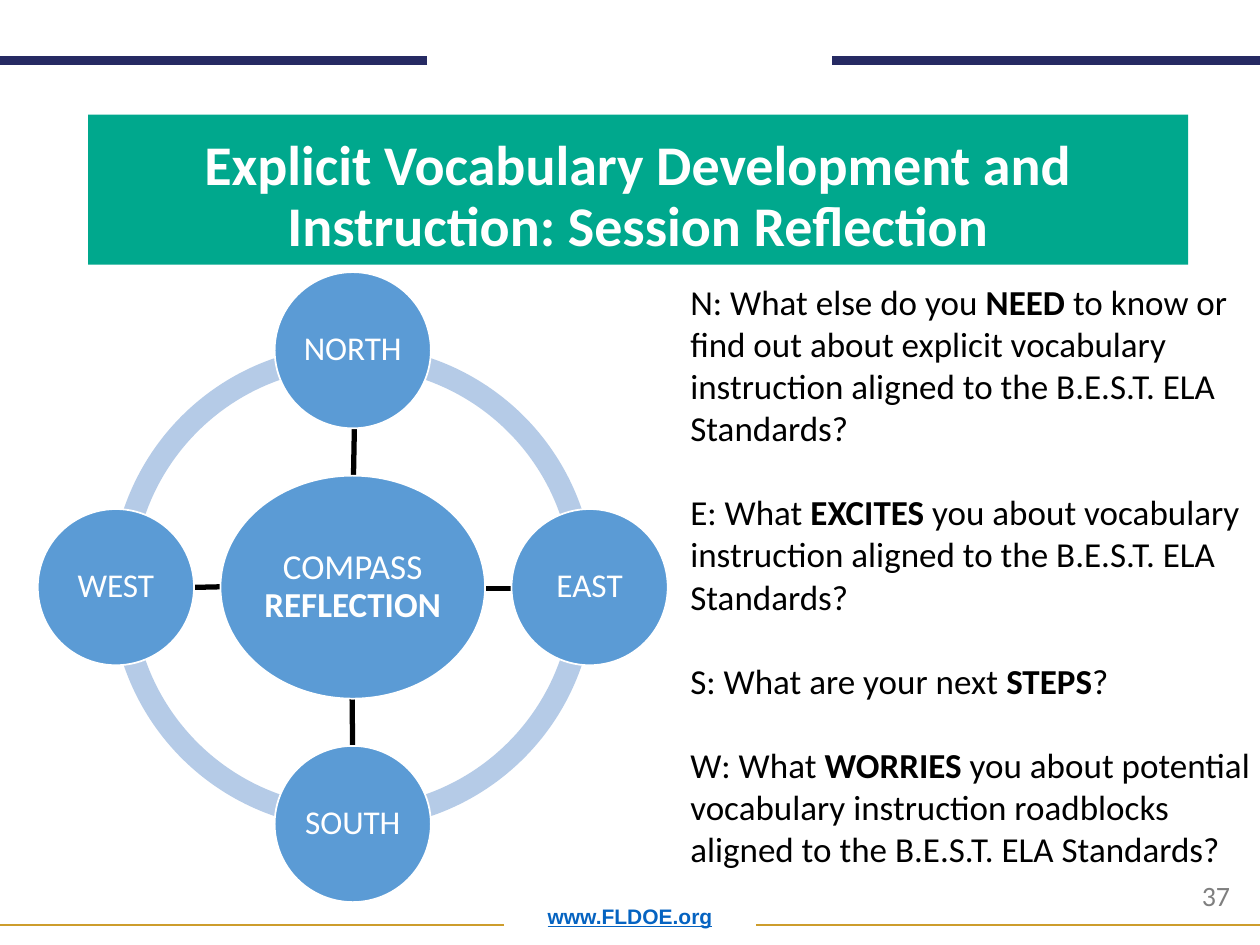
from lxml import etree
from pptx import Presentation
from pptx.dml.color import RGBColor
from pptx.enum.shapes import MSO_CONNECTOR, MSO_SHAPE
from pptx.enum.text import MSO_ANCHOR, PP_ALIGN
from pptx.oxml.ns import qn
from pptx.util import Inches, Pt

STRAIGHT = MSO_CONNECTOR.STRAIGHT
RECTANGLE, OVAL, BLOCK_ARC = MSO_SHAPE.RECTANGLE, MSO_SHAPE.OVAL, MSO_SHAPE.BLOCK_ARC
TOP, MIDDLE, BOTTOM = MSO_ANCHOR.TOP, MSO_ANCHOR.MIDDLE, MSO_ANCHOR.BOTTOM
LEFT, CENTER = PP_ALIGN.LEFT, PP_ALIGN.CENTER

NAVY, GOLD, GREEN = "262A63", "CD9D2C", "00A88D"
BLUE, PALE_BLUE, LINK_BLUE = "5B9BD5", "B5CBE7", "0563C1"
WHITE, BLACK, GRAY = "FFFFFF", "000000", "7F7F7F"

HUB_X, HUB_Y = 2.8, 4.66
ORBIT = 1.88
RING_SIZE, POINT_SIZE = 3.84, 1.24
RING_THICKNESS = 0.046
QUARTERS = [(108, 162), (54, 108), (0, 54), (162, 0)]
COMPASS_POINTS = [("NORTH", 0, -1), ("EAST", 1, 0), ("SOUTH", 0, 1), ("WEST", -1, 0)]
ARROWS = [
    (2.8, 4.07, 2.82, 3.02),
    (3.47, 4.67, 4.29, 4.67),
    (2.79, 5.09, 2.8, 6.07),
    (2.07, 4.65, 1.19, 4.67),
]
RULES = [
    (4, 0, 7.34, GOLD, 1),
    (3.39, 0, 0.48, NAVY, 5),
    (10, 6.6, 0.48, NAVY, 5),
    (10, 6, 7.34, GOLD, 1),
]
QUESTIONS = [
    ("N: What else do you ", "NEED", " to know or find out about explicit vocabulary "
     "instruction aligned to the B.E.S.T. ELA Standards?"),
    ("E: What ", "EXCITES", " you about vocabulary instruction aligned to the "
     "B.E.S.T. ELA Standards?"),
    ("S: What are your next ", "STEPS", "?"),
    ("W: What ", "WORRIES", " you about potential vocabulary instruction roadblocks "
     "aligned to the B.E.S.T. ELA Standards?"),
]


def rgb(value):
    """Turn a hex string into a colour."""
    return RGBColor.from_string(value)


def write_text(frame, paragraphs, size, color, align=LEFT, anchor=TOP,
               bold=False, font="Calibri", spacing=1.0, gap=0):
    """Fill a frame; the second part of each paragraph stands out in bold."""
    frame.word_wrap = True
    frame.vertical_anchor = anchor
    for index, parts in enumerate(paragraphs):
        paragraph = frame.paragraphs[0] if index == 0 else frame.add_paragraph()
        paragraph.alignment = align
        paragraph.line_spacing = spacing
        if index:
            paragraph.space_before = Pt(gap)
        for position, part in enumerate(parts):
            run = paragraph.add_run()
            run.text = part
            run.font.name = font
            run.font.size = Pt(size)
            run.font.bold = bold or position == 1
            run.font.color.rgb = rgb(color)


def add_text(slide, box, paragraphs, size, color, **style):
    """Add a text box and return its frame."""
    frame = slide.shapes.add_textbox(*map(Inches, box)).text_frame
    write_text(frame, paragraphs, size, color, **style)
    return frame


def add_filled(slide, kind, box, fill, outline=None):
    """Add a flat shape with an optional thin outline."""
    shape = slide.shapes.add_shape(kind, *map(Inches, box))
    shape.shadow.inherit = False
    shape.fill.solid()
    shape.fill.fore_color.rgb = rgb(fill)
    if outline:
        shape.line.color.rgb = rgb(outline)
        shape.line.width = Pt(1)
    else:
        shape.line.fill.background()
    return shape


def add_line(slide, ends, color, width, arrow=False):
    """Add a straight line, with an arrowhead at its end if asked."""
    line = slide.shapes.add_connector(STRAIGHT, *map(Inches, ends))
    line.line.color.rgb = rgb(color)
    line.line.width = Pt(width)
    if arrow:
        etree.SubElement(line.line._get_or_add_ln(), qn("a:tailEnd"), type="triangle")
    etree.SubElement(line._element.spPr, qn("a:effectLst"))


def add_disc(slide, center_x, center_y, width, height, words, size):
    """Add a labelled ellipse around a centre."""
    box = (center_x - width / 2, center_y - height / 2, width, height)
    frame = add_filled(slide, OVAL, box, BLUE, WHITE).text_frame
    frame.margin_left = frame.margin_right = Inches(0.03)
    frame.margin_top = frame.margin_bottom = Inches(0.03)
    write_text(frame, [words], size, WHITE, align=CENTER, anchor=MIDDLE, spacing=0.9)


def add_compass(slide):
    """Draw the arrows, the ring, the hub and the four compass points."""
    for ends in ARROWS:
        add_line(slide, ends, BLACK, 3, arrow=True)
    ring_box = (HUB_X - RING_SIZE / 2, HUB_Y - RING_SIZE / 2, RING_SIZE, RING_SIZE)
    for start, end in QUARTERS:
        arc = add_filled(slide, BLOCK_ARC, ring_box, PALE_BLUE)
        for index, value in enumerate((start, end, RING_THICKNESS)):
            arc.adjustments[index] = value
    add_disc(slide, HUB_X, HUB_Y, 2.1, 1.77, ("COMPASS ", "REFLECTION"), 20)
    for name, step_x, step_y in COMPASS_POINTS:
        add_disc(slide, HUB_X + step_x * ORBIT, HUB_Y + step_y * ORBIT,
                 POINT_SIZE, POINT_SIZE, (name,), 19)


def add_page_frame(slide):
    """Draw the rules, the web address and the page number."""
    for start, end, y, color, width in RULES:
        add_line(slide, (start, y, end, y), color, width)
    address = add_text(slide, (0.69, 7, 8.62, 0.42), [("www.FLDOE.org",)], 12, LINK_BLUE,
                       align=CENTER, anchor=BOTTOM, bold=True, font="Arial", spacing=0.9)
    address.paragraphs[0].runs[0].font.underline = True
    add_text(slide, (9.44, 6.92, 0.52, 0.37), [("37",)], 16, GRAY)


def main():
    """Build and save the slide."""
    deck = Presentation()
    deck.slide_width, deck.slide_height = Inches(10), Inches(7.5)
    slide = deck.slides.add_slide(deck.slide_layouts[6])
    add_page_frame(slide)
    banner = add_filled(slide, RECTANGLE, (0.7, 0.91, 8.73, 1.19), GREEN)
    title = "Explicit Vocabulary Development and Instruction: Session Reflection"
    write_text(banner.text_frame, [(title,)], 32, WHITE, align=CENTER,
               anchor=BOTTOM, bold=True, spacing=0.9)
    add_compass(slide)
    add_text(slide, (5.38, 2.18, 4.79, 4.85), QUESTIONS, 20, BLACK, gap=24)
    deck.save("out.pptx")


if __name__ == "__main__":
    main()
